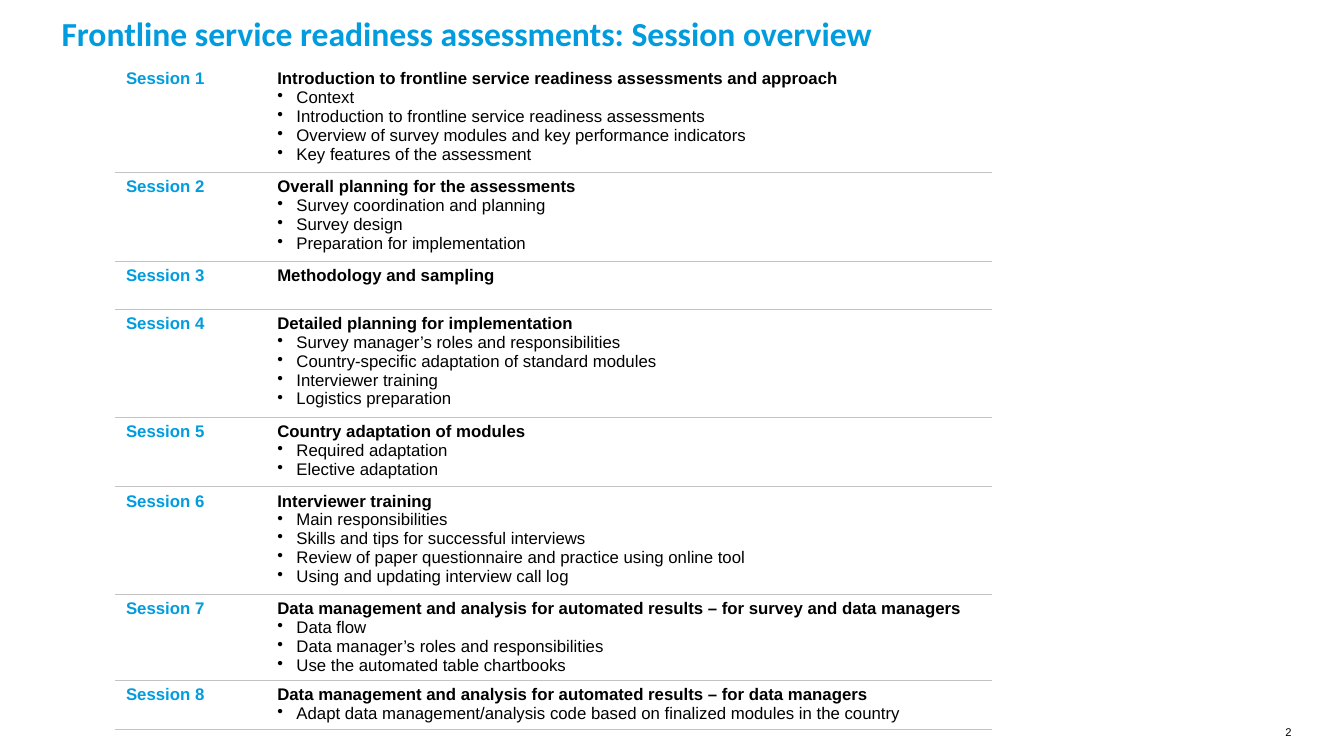
"""Build the session overview slide."""
import dataclasses

import lxml.etree
import pptx
import pptx.dml.color
import pptx.enum.text
import pptx.oxml.ns
import pptx.util

Inches = pptx.util.Inches
Pt = pptx.util.Pt
ALIGN = pptx.enum.text.PP_ALIGN
ANCHOR = pptx.enum.text.MSO_ANCHOR


@dataclasses.dataclass
class Theme:
    blue: str = "009CDE"
    black: str = "000000"
    white: str = "FFFFFF"
    rule: str = "C3C3C3"
    head: str = "Calibri"
    body: str = "Arial"
    large: int = 24
    mid: int = 12
    small: int = 8


SESSIONS = [
    (1.07, "Introduction to frontline service readiness assessments and approach",
     ["Context", "Introduction to frontline service readiness assessments",
      "Overview of survey modules and key performance indicators",
      "Key features of the assessment"]),
    (0.88, "Overall planning for the assessments",
     ["Survey coordination and planning", "Survey design",
      "Preparation for implementation"]),
    (0.48, "Methodology and sampling", []),
    (1.07, "Detailed planning for implementation",
     ["Survey manager’s roles and responsibilities",
      "Country-specific adaptation of standard modules",
      "Interviewer training", "Logistics preparation"]),
    (0.69, "Country adaptation of modules",
     ["Required adaptation", "Elective adaptation"]),
    (1.07, "Interviewer training",
     ["Main responsibilities", "Skills and tips for successful interviews",
      "Review of paper questionnaire and practice using online tool",
      "Using and updating interview call log"]),
    (0.85, "Data management and analysis for automated results – for survey and data managers",
     ["Data flow", "Data manager’s roles and responsibilities",
      "Use the automated table chartbooks"]),
    (0.49, "Data management and analysis for automated results – for data managers",
     ["Adapt data management/analysis code based on finalized modules in the country"]),
]


class Deck:
    def __init__(self, theme):
        self.theme = theme
        self.file = pptx.Presentation()
        self.file.slide_width = Inches(13.33)
        self.file.slide_height = Inches(7.5)
        self.slide = self.file.slides.add_slide(self.file.slide_layouts[5])

    def text(self, para, words, size, color, bold=False, face=None):
        run = para.add_run()
        run.text = words
        run.font.size = Pt(size)
        run.font.bold = bold
        run.font.name = face or self.theme.body
        run.font.color.rgb = pptx.dml.color.RGBColor.from_string(color)

    def frame(self, shape, spot, pads):
        shape.left, shape.top, shape.width, shape.height = map(Inches, spot)
        frame = shape.text_frame
        frame.word_wrap = True
        frame.auto_size = pptx.enum.text.MSO_AUTO_SIZE.NONE
        (frame.margin_left, frame.margin_top,
         frame.margin_right, frame.margin_bottom) = map(Inches, pads)
        return frame

    def title(self, words, spot):
        frame = self.frame(self.slide.shapes.title, spot, (0.02, 0, 0.39, 0))
        frame.vertical_anchor = ANCHOR.BOTTOM
        para = frame.paragraphs[0]
        para.alignment = ALIGN.LEFT
        para.line_spacing = 0.9
        self.text(para, words, self.theme.large, self.theme.blue, True, self.theme.head)

    def number(self, words, spot):
        box = self.slide.shapes.add_textbox(*map(Inches, spot))
        para = self.frame(box, spot, (0, 0, 0, 0)).paragraphs[0]
        para.alignment = ALIGN.RIGHT
        self.text(para, words, self.theme.small, self.theme.black)

    def bullet(self, para):
        props = para._p.get_or_add_pPr()
        props.set("marL", str(Inches(0.19)))
        props.set("indent", str(-Inches(0.19)))
        mark = lxml.etree.SubElement(props, pptx.oxml.ns.qn("a:buChar"))
        mark.set("char", "•")

    def edge(self, cell, first):
        qn = pptx.oxml.ns.qn
        props = cell._tc.get_or_add_tcPr()
        white, rule = (self.theme.white, 1), (self.theme.rule, 0.75)
        sides = {"L": white, "R": white, "T": white if first else rule, "B": rule}
        for side, (color, width) in sides.items():
            line = lxml.etree.SubElement(props, qn("a:ln" + side), w=str(Pt(width)))
            fill = lxml.etree.SubElement(line, qn("a:solidFill"))
            lxml.etree.SubElement(fill, qn("a:srgbClr"), val=color)
        cell.fill.background()

    def table(self, items, left, top, widths):
        high = sum(item[0] for item in items)
        grid = self.slide.shapes.add_table(
            len(items), len(widths), Inches(left), Inches(top),
            Inches(sum(widths)), Inches(high)).table
        grid.first_row = grid.horz_banding = False
        for col, width in zip(grid.columns, widths):
            col.width = Inches(width)
        size = self.theme.mid
        for row, (height, topic, points) in enumerate(items):
            grid.rows[row].height = Inches(height)
            name, cell = grid.cell(row, 0), grid.cell(row, 1)
            self.edge(name, row == 0)
            self.edge(cell, row == 0)
            self.text(name.text_frame.paragraphs[0], f"Session {row + 1}",
                      size, self.theme.blue, True)
            self.text(cell.text_frame.paragraphs[0], topic,
                      size, self.theme.black, True)
            for point in points:
                para = cell.text_frame.add_paragraph()
                self.bullet(para)
                self.text(para, point, size, self.theme.black)


def main():
    deck = Deck(Theme())
    deck.number("2", (12.49, 7.2, 0.32, 0.2))
    deck.title("Frontline service readiness assessments: Session overview",
               (0.59, 0.1, 9.53, 0.43))
    deck.table(SESSIONS, 1.15, 0.64, (1.5, 7.18))
    deck.file.save("out.pptx")


if __name__ == "__main__":
    main()
